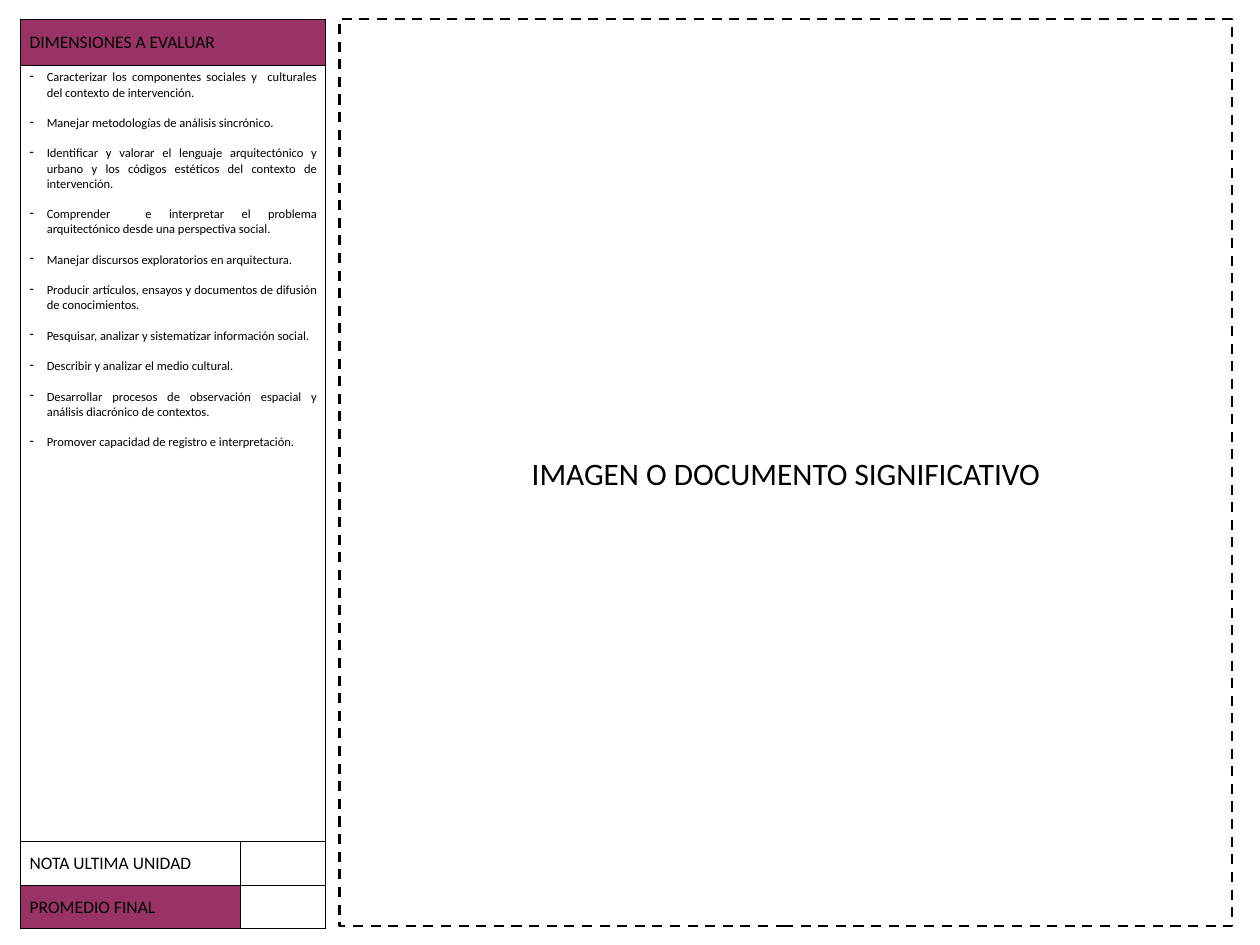
from lxml.etree import SubElement
from pptx import Presentation
from pptx.dml.color import RGBColor
from pptx.enum.dml import MSO_LINE
from pptx.enum.shapes import MSO_SHAPE as Shape
from pptx.enum.text import MSO_ANCHOR as Anchor, PP_ALIGN as Align
from pptx.oxml.ns import qn
from pptx.util import Inches, Pt

COLORS = {"ink": "000000", "plum": "993366", "paper": "FFFFFF"}
FONT = "Calibri"
COLUMN_WIDTHS = [2.44, 0.95]
ROW_HEIGHTS = [0.52, 8.62, 0.49, 0.48]
THIN, THICK = 0.5, 1
DIMENSIONS = [
    "Caracterizar los componentes sociales y  culturales del contexto de intervención.",
    "Manejar metodologías de análisis sincrónico.",
    "Identificar y valorar el lenguaje arquitectónico y urbano y los códigos "
    "estéticos del contexto de intervención.",
    "Comprender  e interpretar el problema arquitectónico desde una perspectiva social.",
    "Manejar discursos exploratorios en arquitectura.",
    "Producir artículos, ensayos y documentos de difusión de conocimientos.",
    "Pesquisar, analizar y sistematizar información social.",
    "Describir y analizar el medio cultural.",
    "Desarrollar procesos de observación espacial y análisis diacrónico de contextos.",
    "Promover capacidad de registro e interpretación.",
]


def color(name):
    return RGBColor.from_string(COLORS[name])


def write(paragraph, text, size, align):
    paragraph.text = text
    paragraph.alignment = align
    for run in paragraph.runs:
        run.font.name = FONT
        run.font.size = Pt(size)
        run.font.color.rgb = color("ink")


def add_dash_bullet(paragraph):
    properties = paragraph._p.get_or_add_pPr()
    properties.set("marL", str(Inches(0.19)))
    properties.set("indent", str(-Inches(0.19)))
    SubElement(properties, qn("a:buChar"), char="-")


def set_borders(cell, widths):
    properties = cell._tc.get_or_add_tcPr()
    for position, (side, width) in enumerate(zip("LTRB", widths)):
        border = SubElement(properties, qn(f"a:ln{side}"), w=str(Pt(width)))
        fill = SubElement(border, qn("a:solidFill"))
        SubElement(fill, qn("a:srgbClr"), val=COLORS["ink"])
        properties.insert("LRTB".index(side) if position != 1 else 1, border)


def style_cell(cell, fill, borders):
    if fill:
        cell.fill.solid()
        cell.fill.fore_color.rgb = color(fill)
    else:
        cell.fill.background()
    set_borders(cell, borders)


def add_label(cell, text):
    cell.vertical_anchor = Anchor.MIDDLE
    write(cell.text_frame.paragraphs[0], text, 14, Align.JUSTIFY)


def add_dimensions(cell):
    frame = cell.text_frame
    for index, dimension in enumerate(DIMENSIONS):
        paragraph = frame.add_paragraph() if index else frame.paragraphs[0]
        write(paragraph, dimension, 10, Align.JUSTIFY)
        if index:
            paragraph.space_before = Pt(12.2)
        add_dash_bullet(paragraph)


def add_evaluation_table(slide):
    table = slide.shapes.add_table(
        len(ROW_HEIGHTS), len(COLUMN_WIDTHS), Inches(0.23), Inches(0.21),
        Inches(sum(COLUMN_WIDTHS)), Inches(sum(ROW_HEIGHTS))).table
    table.first_row = table.horz_banding = False
    for column, width in zip(table.columns, COLUMN_WIDTHS):
        column.width = Inches(width)
    for row, height in zip(table.rows, ROW_HEIGHTS):
        row.height = Inches(height)

    styles = [
        [("plum", (THICK, THIN, THICK, THICK))] * 2,
        [(None, (THICK, THICK, THICK, THICK))] * 2,
        [("paper", (THICK, THICK, THIN, THIN)), (None, (THIN, THIN, THICK, THIN))],
        [("plum", (THICK, THIN, THIN, THICK)), (None, (THIN, THIN, THICK, THICK))],
    ]
    for row, row_styles in enumerate(styles):
        for column, (fill, borders) in enumerate(row_styles):
            style_cell(table.cell(row, column), fill, borders)
    for row in (0, 1):
        table.cell(row, 0).merge(table.cell(row, 1))

    add_label(table.cell(0, 0), "DIMENSIONES A EVALUAR")
    add_dimensions(table.cell(1, 0))
    add_label(table.cell(2, 0), "NOTA ULTIMA UNIDAD")
    add_label(table.cell(3, 0), "PROMEDIO FINAL")


def add_document_frame(slide):
    frame = slide.shapes.add_shape(
        Shape.RECTANGLE, Inches(3.77), Inches(0.21), Inches(9.92), Inches(10.08))
    frame.shadow.inherit = False
    frame.fill.background()
    frame.line.color.rgb = color("ink")
    frame.line.width = Pt(2)
    frame.line.dash_style = MSO_LINE.DASH
    frame.text_frame.vertical_anchor = Anchor.MIDDLE
    write(frame.text_frame.paragraphs[0], "IMAGEN O DOCUMENTO SIGNIFICATIVO",
          25, Align.CENTER)


def main():
    presentation = Presentation()
    presentation.slide_width = Inches(14)
    presentation.slide_height = Inches(10.5)
    slide = presentation.slides.add_slide(presentation.slide_layouts[6])
    add_evaluation_table(slide)
    add_document_frame(slide)
    presentation.save("out.pptx")


if __name__ == "__main__":
    main()
